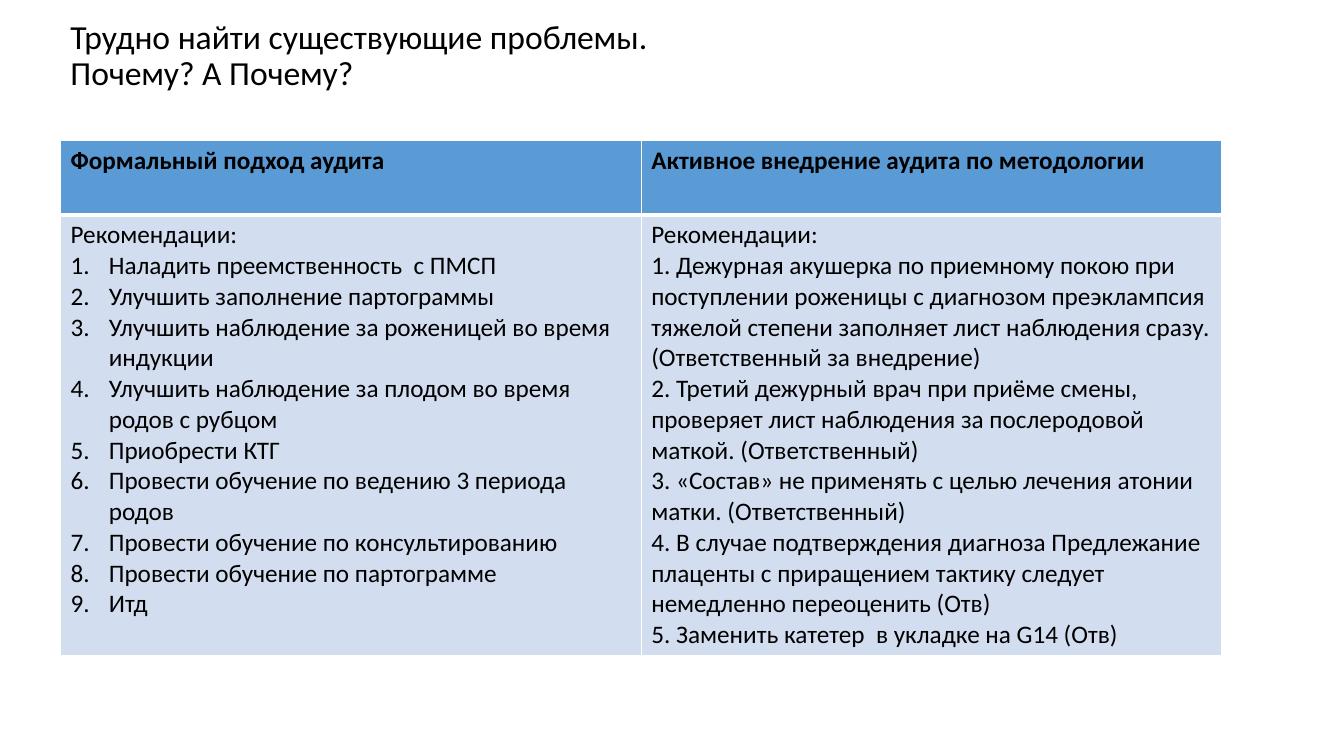
from pptx import Presentation
from pptx.util import Inches, Pt
from pptx.dml.color import RGBColor
from pptx.enum.text import MSO_ANCHOR
from pptx.oxml import parse_xml
from pptx.oxml.ns import nsdecls


def paint(fill, color):
    fill.solid()
    fill.fore_color.rgb = RGBColor.from_string(color)


def write(para, text, size, bold=False):
    run = para.add_run()
    run.text = text
    run.font.name = "Calibri"
    run.font.size = Pt(size)
    run.font.bold = bold
    paint(run.font.fill, "000000")


deck = Presentation()
deck.slide_width, deck.slide_height = Inches(13.33), Inches(7.5)
slide = deck.slides.add_slide(deck.slide_layouts[6])

title = slide.shapes.add_textbox(Inches(0.6), Inches(0), Inches(11.52), Inches(1.12))
frame = title.text_frame
frame.word_wrap = True
frame.vertical_anchor = MSO_ANCHOR.MIDDLE
para = frame.paragraphs[0]
para.line_spacing = 0.9
write(para, "Трудно найти существующие проблемы.", 24)
para.add_line_break()
write(para, "Почему? А Почему?", 24)

heads = ["Формальный подход аудита", "Активное внедрение аудита по методологии"]
formal = [
    "Наладить преемственность  с ПМСП",
    "Улучшить заполнение партограммы",
    "Улучшить наблюдение за роженицей во время индукции",
    "Улучшить наблюдение за плодом во время родов с рубцом",
    "Приобрести КТГ",
    "Провести обучение по ведению 3 периода родов",
    "Провести обучение по консультированию",
    "Провести обучение по партограмме",
    "Итд",
]
active = [
    "1. Дежурная акушерка по приемному покою при поступлении роженицы с диагнозом преэклампсия "
    "тяжелой степени заполняет лист наблюдения сразу. (Ответственный за внедрение)",
    "2. Третий дежурный врач при приёме смены, проверяет лист наблюдения за послеродовой маткой. "
    "(Ответственный)",
    "3. «Состав» не применять с целью лечения атонии матки. (Ответственный)",
    "4. В случае подтверждения диагноза Предлежание плаценты с приращением тактику следует "
    "немедленно переоценить (Отв)",
    "5. Заменить катетер  в укладке на G14 (Отв)",
]
lead = "Рекомендации:"
rows = [[[head] for head in heads], [[lead] + formal, [lead] + active]]
fills = ["5B9BD5", "D2DEEF"]
heights = [0.74, 4.37]

table = slide.shapes.add_table(
    2, 2, Inches(0.6), Inches(1.39), Inches(11.52), Inches(sum(heights))
).table
for r, row in enumerate(rows):
    table.rows[r].height = Inches(heights[r])
    for c, lines in enumerate(row):
        cell = table.cell(r, c)
        paint(cell.fill, fills[r])
        for n, line in enumerate(lines):
            body = cell.text_frame
            para = body.add_paragraph() if n else body.paragraphs[0]
            write(para, line, 18, r == 0)
            if r == 1 and c == 0 and n:
                props = para._p.get_or_add_pPr()
                props.set("marL", str(Inches(0.38)))
                props.set("indent", str(Inches(-0.38)))
                props.append(parse_xml(
                    f'<a:buAutoNum {nsdecls("a")} type="arabicPeriod"/>'))
        for n, side in enumerate("LRTB"):
            thick = (r, side) in [(0, "B"), (1, "T")]
            cell._tc.get_or_add_tcPr().insert(n, parse_xml(
                f'<a:ln{side} {nsdecls("a")} w="{Pt(3 if thick else 1)}"><a:solidFill>'
                f'<a:srgbClr val="FFFFFF"/></a:solidFill></a:ln{side}>'))

deck.save("out.pptx")
